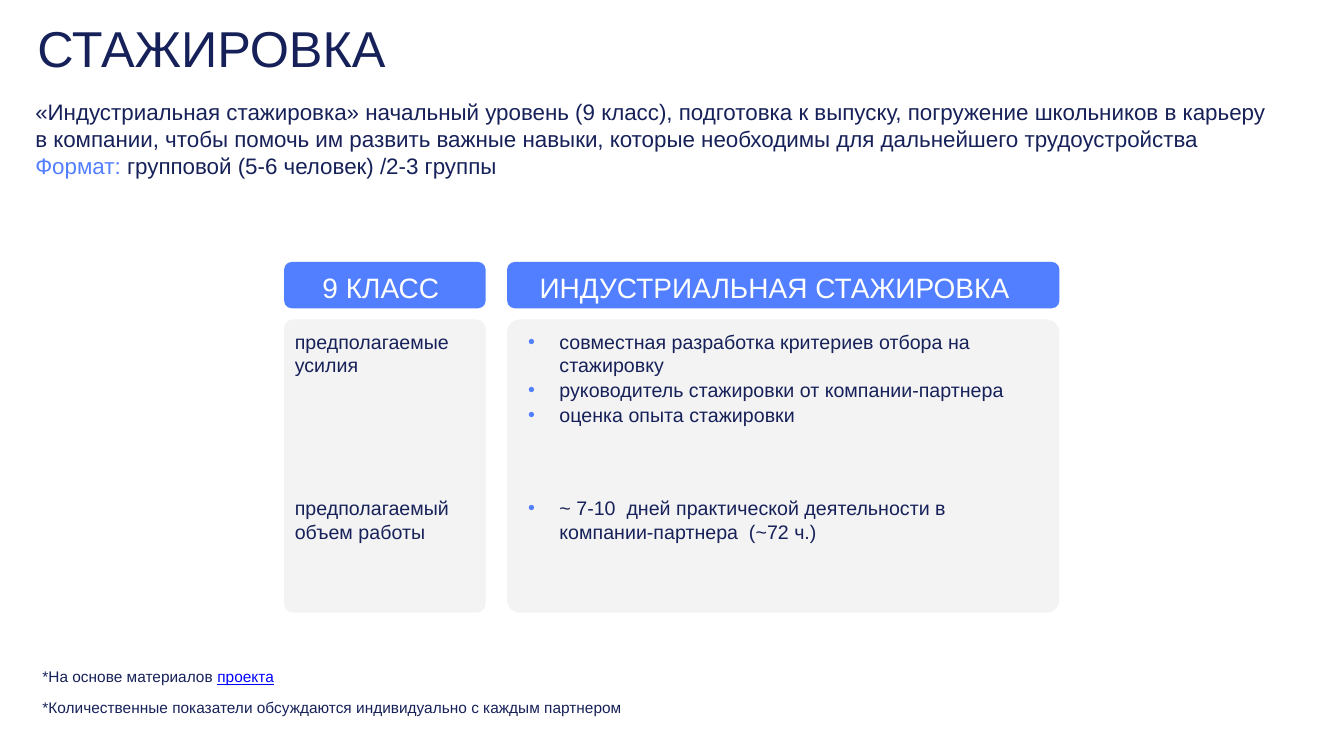
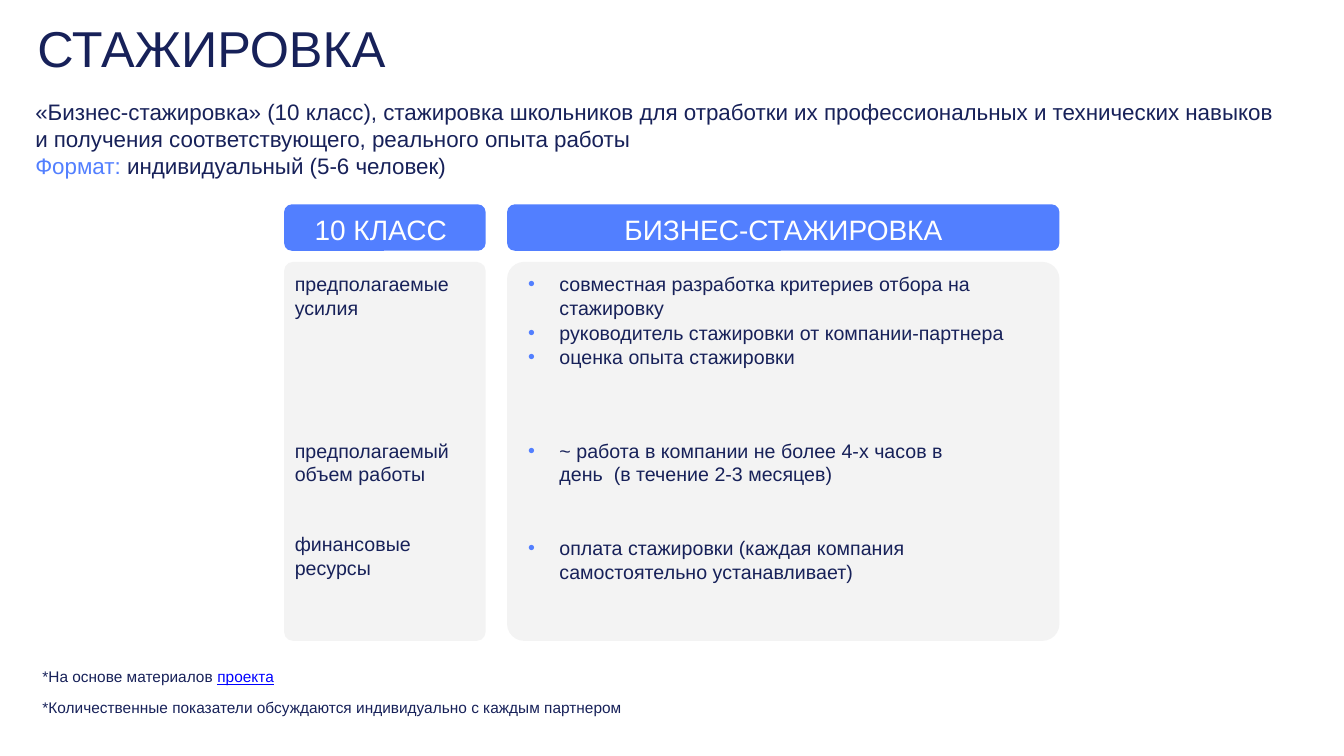
from lxml import etree
from pptx import Presentation
from pptx.dml.color import RGBColor
from pptx.enum import shapes, text
from pptx.oxml.ns import qn
from pptx.util import Cm, Pt

COLOURS = {"navy": "172159", "blue": "527FFF", "card": "F3F3F3",
           "white": "FFFFFF", "link": "0000FF"}
FONT = "Arial"

TITLE = "СТАЖИРОВКА"
FOOTNOTES = [
    ["*На основе материалов ", ("проекта", "link")],
    ["*Количественные показатели обсуждаются индивидуально с каждым партнером"],
]
EFFORT = ("предполагаемые усилия", [
    "совместная разработка критериев отбора на стажировку",
    "руководитель стажировки от компании-партнера",
    "оценка опыта стажировки",
])
WORKLOAD = "предполагаемый объем работы"

# Each heading is paired with its left indent in cm
SLIDES = [
    {
        "intro": "«Индустриальная стажировка» начальный уровень (9 класс), "
                 "подготовка к выпуску, погружение школьников в карьеру в компании, "
                 "чтобы помочь им развить важные навыки, которые необходимы "
                 "для дальнейшего трудоустройства",
        "format": "групповой (5-6 человек) /2-3 группы",
        "headings": [("9 КЛАСС", 0.91), ("ИНДУСТРИАЛЬНАЯ СТАЖИРОВКА", 0.76)],
        "rows": [
            EFFORT,
            (WORKLOAD, ["~ 7-10  дней практической деятельности "
                        "в компании-партнера  (~72 ч.)"]),
        ],
        "card_top": 8.05, "card_height": 7.39,
    },
    {
        "intro": "«Бизнес-стажировка» (10 класс), стажировка школьников для отработки "
                 "их профессиональных и технических навыков и получения "
                 "соответствующего, реального опыта работы",
        "format": "индивидуальный (5-6 человек)",
        "headings": [("10 КЛАСС", 0.71), ("БИЗНЕС-СТАЖИРОВКА", 2.9)],
        "rows": [
            EFFORT,
            (WORKLOAD, ["~ работа в компании не более 4-х часов в день  "
                        "(в течение 2-3 месяцев)"]),
            ("финансовые ресурсы", ["оплата стажировки (каждая компания "
                                    "самостоятельно устанавливает)"]),
        ],
        "card_top": 6.6, "card_height": 9.55,
    },
]

# All positions below are in cm
COLUMNS = [(7.16, 5.08), (12.78, 13.92)]            # left, width
HEADING_RISE, HEADING_HEIGHT = 1.45, 1.17
LABEL_LEFT, LABEL_WIDTH, ITEMS_LEFT = 7.43, 4.57, 13.26
ROWS = [(0.23, 0.23, 12.34), (4.42, 4.42, 11.02), (6.78, 6.88, 11.02)]  # label top, items top, items width
ROW_HEIGHT = 1.27
FOOTNOTE_TOP, FOOTNOTE_STEP = 16.79, 0.76
TIGHT = (0, 0.03, 0, 0)                             # left, top, right, bottom
ROOMY = (0.25, 0.13, 0.25, 0.13)


def rgb(name):
    return RGBColor.from_string(COLOURS[name])


def add_bullet(paragraph):
    properties = paragraph._p.get_or_add_pPr()
    properties.set("marL", str(Cm(0.84)))
    properties.set("indent", str(-Cm(0.79)))
    colour = etree.SubElement(properties, qn("a:buClr"))
    etree.SubElement(colour, qn("a:srgbClr"), val=COLOURS["blue"])
    etree.SubElement(properties, qn("a:buFont"), typeface=FONT)
    etree.SubElement(properties, qn("a:buChar"), char="•")


def write(frame, paragraphs, size, colour="navy", insets=TIGHT, bullets=False,
          anchor=text.MSO_ANCHOR.TOP):
    """Fill a text frame; a paragraph lists strings or (string, colour) pairs."""
    frame.word_wrap = True
    frame.vertical_anchor = anchor
    (frame.margin_left, frame.margin_top,
     frame.margin_right, frame.margin_bottom) = map(Cm, insets)
    for index, pieces in enumerate(paragraphs):
        paragraph = frame.add_paragraph() if index else frame.paragraphs[0]
        paragraph.alignment = text.PP_ALIGN.LEFT
        if bullets:
            paragraph.space_before = Pt(0.9)
            add_bullet(paragraph)
        for piece in pieces:
            words, tint = (piece, colour) if isinstance(piece, str) else piece
            run = paragraph.add_run()
            run.text = words
            run.font.name, run.font.size = FONT, Pt(size)
            run.font.color.rgb = rgb(tint)
            if tint == "link":
                run.font.underline = True


def add_text(slide, box, paragraphs, size, **formatting):
    write(slide.shapes.add_textbox(*map(Cm, box)).text_frame,
          paragraphs, size, **formatting)


def add_panel(slide, box, fill):
    panel = slide.shapes.add_shape(shapes.MSO_SHAPE.ROUNDED_RECTANGLE, *map(Cm, box))
    panel.shadow.inherit = False
    panel.fill.solid()
    panel.fill.fore_color.rgb = rgb(fill)
    panel.line.fill.background()
    return panel


def add_frame(slide):
    """Title and footnotes, the same on every slide."""
    add_text(slide, (0.69, 0.3, 29.46, 1.8), [[TITLE]], 36, insets=ROOMY)
    for index, note in enumerate(FOOTNOTES):
        top = FOOTNOTE_TOP + index * FOOTNOTE_STEP
        add_text(slide, (1.07, top, 15.57, 0.5), [note], 11)


def add_programme(slide, content):
    add_text(slide, (0.64, 2.34, 31.88, 2.31),
             [[content["intro"]], [("Формат: ", "blue"), content["format"]]],
             16, insets=ROOMY)
    top = content["card_top"]
    for (left, width), (heading, indent) in zip(COLUMNS, content["headings"]):
        card = add_panel(slide, (left, top, width, content["card_height"]), "card")
        card.adjustments[0] = 0.045
        band = add_panel(slide, (left, top - HEADING_RISE, width, HEADING_HEIGHT), "blue")
        write(band.text_frame, [[heading]], 20, colour="white",
              insets=(indent, 0.1, 0, 0), anchor=text.MSO_ANCHOR.MIDDLE)
    for (label, items), (label_top, items_top, items_width) in zip(content["rows"], ROWS):
        add_text(slide, (LABEL_LEFT, top + label_top, LABEL_WIDTH, ROW_HEIGHT),
                 [[label]], 14)
        add_text(slide, (ITEMS_LEFT, top + items_top, items_width, ROW_HEIGHT),
                 [[item] for item in items], 14, bullets=True)


def main():
    deck = Presentation()
    deck.slide_width, deck.slide_height = Cm(33.87), Cm(19.05)
    for content in SLIDES:
        slide = deck.slides.add_slide(deck.slide_layouts[6])
        add_frame(slide)
        add_programme(slide, content)
    deck.save("out.pptx")


if __name__ == "__main__":
    main()
